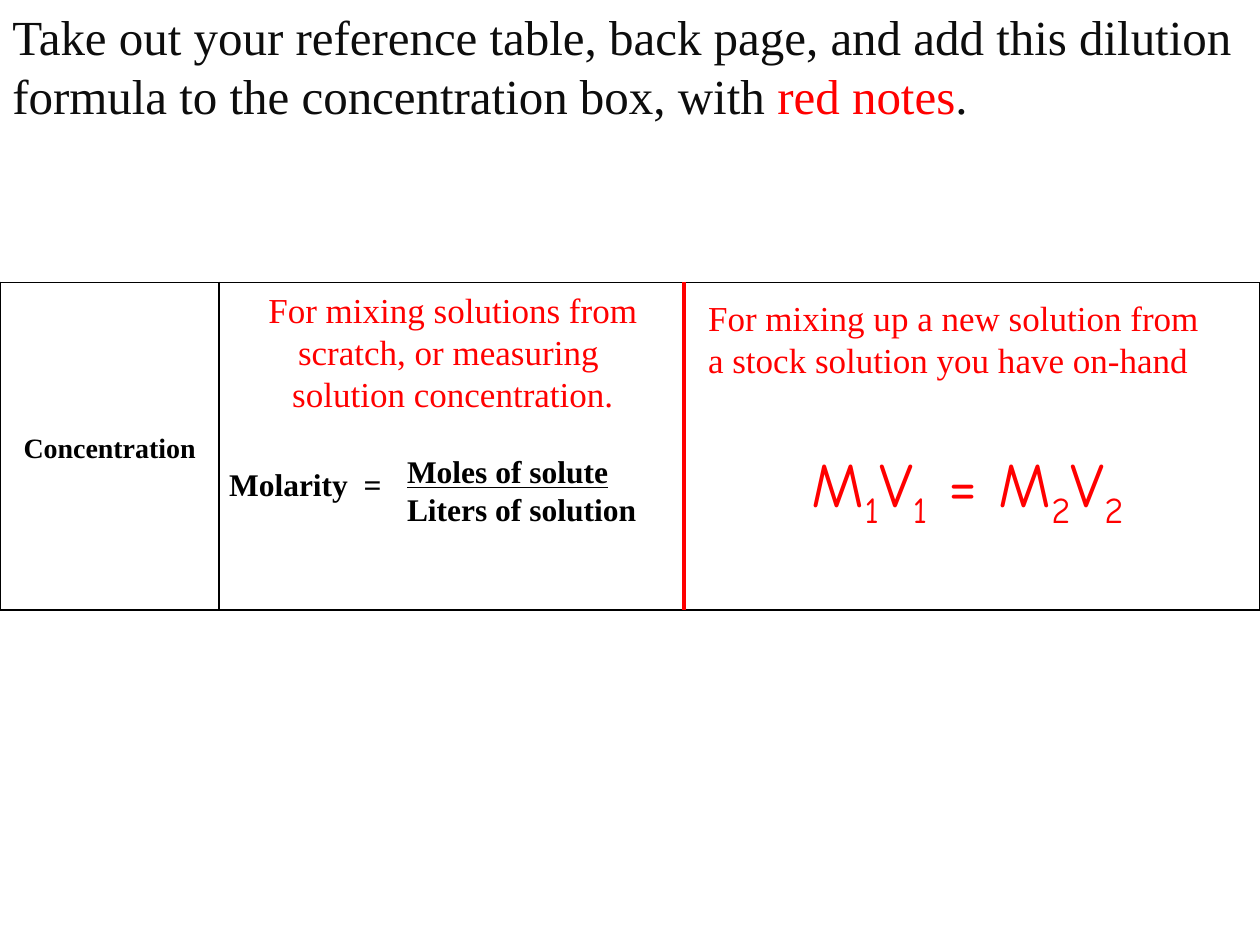
import pptx
import pptx.util
import pptx.dml.color
import pptx.enum.text
import pptx.enum.shapes
from lxml import etree

# The slide is a grid of 100 columns by 75 rows
WIDE, HIGH = 10, 7.5
COLS, ROWS = 100, 75
SERIF, HAND = "Times New Roman", "Comic Neue"
RED, BLACK, DARK = "FF0000", "000000", "0D0D0D"
ALIGN = pptx.enum.text.PP_ALIGN
NS = "http://schemas.openxmlformats.org/drawingml/2006/main"


def hue(code):
    return pptx.dml.color.RGBColor.from_string(code)


def across(cols):
    return pptx.util.Inches(cols * WIDE / COLS)


def down(rows):
    return pptx.util.Inches(rows * HIGH / ROWS)


def place(box, x, y, w, h):
    """Slide position of an area given from the box's top left corner."""
    return across(box[0] + x), down(box[1] + y), across(w), down(h)


def child(up, tag, **attrs):
    return etree.SubElement(up, f"{{{NS}}}{tag}", **attrs)


def write(para, text, size=20, font=SERIF, color=RED, bold=False,
          under=False, base=0):
    """Add text to a paragraph; a newline becomes a line break."""
    for i, line in enumerate(text.split("\n")):
        if i:
            para.add_line_break()
        run = para.add_run()
        run.text = line
        run.font.size = pptx.util.Pt(size)
        run.font.name = font
        run.font.color.rgb = hue(color)
        run.font.bold = bold
        run.font.underline = under
        if base:
            run._r.get_or_add_rPr().set("baseline", str(base * 1000))


def inset(part, gap=0.04):
    for side in ("left", "right", "top", "bottom"):
        setattr(part, f"margin_{side}", pptx.util.Inches(gap))


def frame(slide, spot, align=ALIGN.LEFT, tight=True):
    """Add a wrapping text box; return its text frame."""
    body = slide.shapes.add_textbox(*spot).text_frame
    body.word_wrap = True
    if tight:
        inset(body)
    body.paragraphs[0].alignment = align
    return body


def header(slide, box):
    para = frame(slide, place(box, 0, 0, *box[2:]), tight=False).paragraphs[0]
    write(para, "Take out your reference table, back page, and add this "
          "dilution formula to the concentration box, with ", 28, color=DARK)
    write(para, "red notes", 28)
    write(para, ".", 28, color=DARK)


def grid(slide, box, first):
    """Bordered two-cell table with the topic in its first cell."""
    table = slide.shapes.add_table(1, 2, *place(box, 0, 0, *box[2:])).table
    table.first_row = table.horz_banding = False
    table.columns[0].width = across(first)
    table.columns[1].width = across(box[2] - first)
    for cell in table.iter_cells():
        props = cell._tc.get_or_add_tcPr()
        for side in ("lnL", "lnR", "lnT", "lnB"):
            edge = child(props, side, w=str(pptx.util.Pt(1)))
            child(child(edge, "solidFill"), "srgbClr", val=BLACK)
        cell.fill.background()

    topic = table.cell(0, 0)
    inset(topic)
    topic.vertical_anchor = pptx.enum.text.MSO_ANCHOR.MIDDLE
    para = topic.text_frame.paragraphs[0]
    para.alignment = ALIGN.CENTER
    para.line_spacing = 1.19
    para.space_after = pptx.util.Pt(6)
    write(para, "Concentration", 16, color=BLACK, bold=True)


def molar(slide, box):
    """Molarity as a fraction, with its note above."""
    bold = dict(size=18, color=BLACK, bold=True)
    name = frame(slide, place(box, -0.7, 14.1, 14, 4.9), ALIGN.RIGHT)
    write(name.paragraphs[0], "Molarity  =", **bold)
    ratio = frame(slide, place(box, 14.5, 13.1, 20.8, 7.5)).paragraphs[0]
    write(ratio, "Moles of solute", under=True, **bold)
    write(ratio, "\nLiters of solution", **bold)
    note = frame(slide, place(box, 0.2, 0.1, 36.7, 10.8), ALIGN.CENTER)
    write(note.paragraphs[0], "For mixing solutions from scratch, or "
          "measuring \nsolution concentration.")


def dilute(slide, box):
    """Red divider, then the dilution note and formula."""
    x, y, w, h = place(box, 0, 0, *box[2:])
    rule = slide.shapes.add_connector(
        pptx.enum.shapes.MSO_CONNECTOR.STRAIGHT, x, y, x, y + h)
    rule.line.color.rgb = hue(RED)
    rule.line.width = pptx.util.Pt(2.25)
    child(rule._element.spPr, "effectLst")

    body = frame(slide, place(box, 1.5, 0.7, 42, 18.4))
    write(body.paragraphs[0], "For mixing up a new solution from\n"
          "a stock solution you have on-hand")
    para = body.add_paragraph()
    para.alignment = ALIGN.CENTER
    para.space_before = pptx.util.Pt(37)
    for text, low in (("M", "1"), ("V", "1"), (" = M", "2"), ("V", "2")):
        write(para, text, 36, HAND)
        write(para, low, 36, HAND, base=-25)


def main():
    deck = pptx.Presentation()
    deck.slide_width, deck.slide_height = across(COLS), down(ROWS)
    slide = deck.slides.add_slide(deck.slide_layouts[6])
    top, tall = 22.4, 26
    first, split = 17.4, 54.3
    header(slide, (0, 0, COLS, 13.5))
    grid(slide, (0, top, COLS, tall), first)
    molar(slide, (first, top, split - first, tall))
    dilute(slide, (split, top, COLS - split, tall))
    deck.save("out.pptx")


if __name__ == "__main__":
    main()
